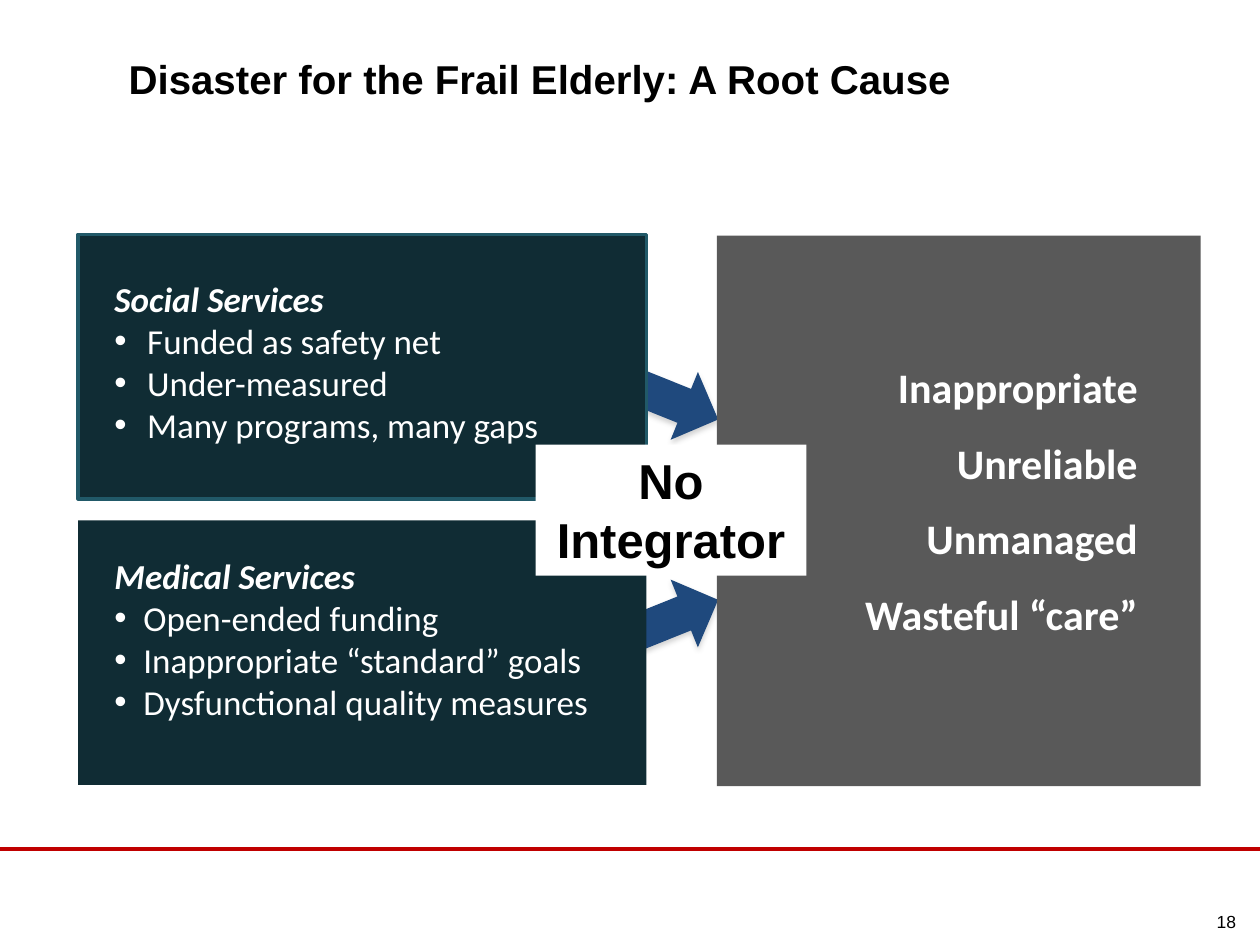
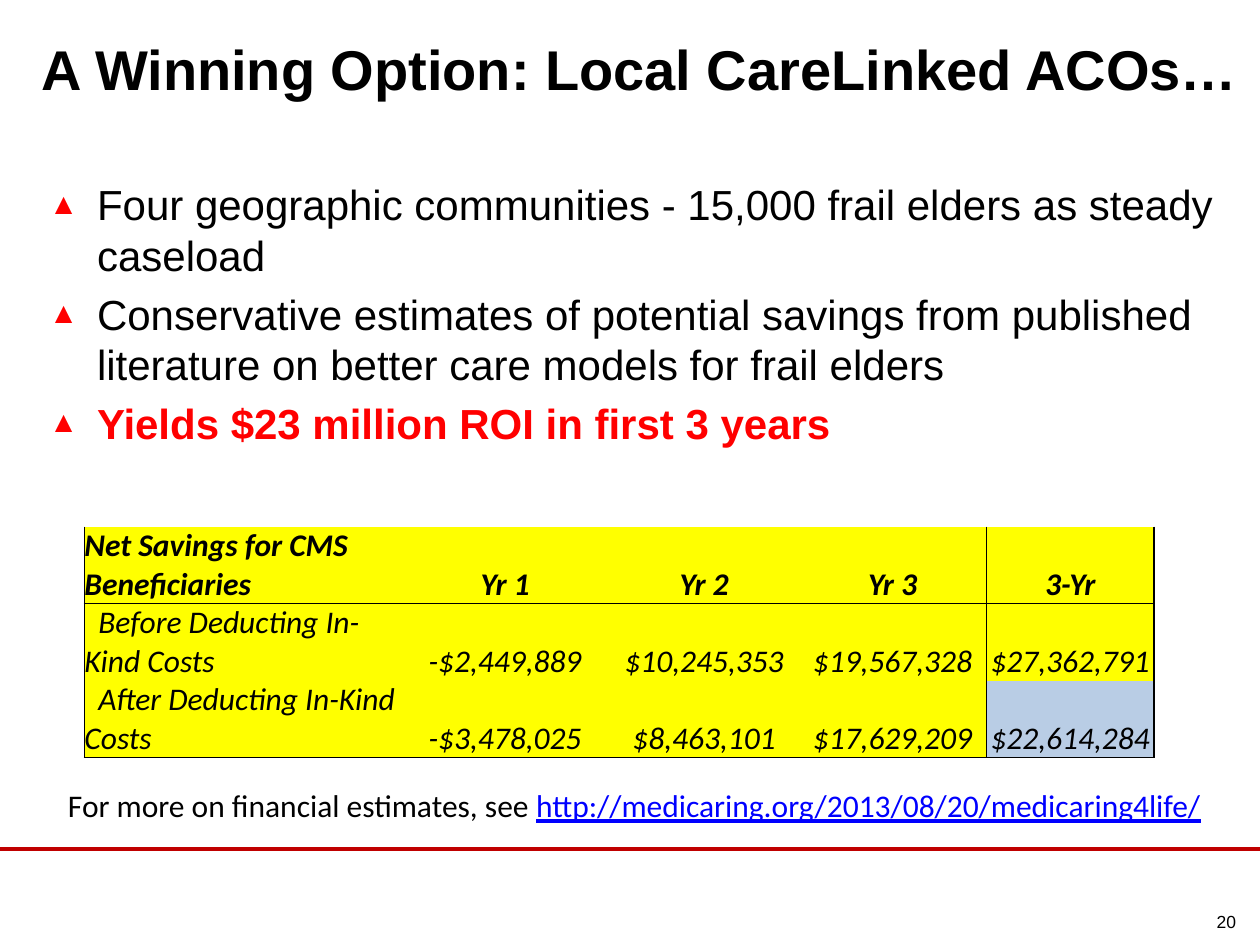
from lxml.etree import SubElement
from pptx import Presentation
from pptx.dml.color import RGBColor
from pptx.enum.shapes import MSO_CONNECTOR, MSO_SHAPE as SHAPE
from pptx.enum.text import MSO_ANCHOR as ANCHOR, MSO_AUTO_SIZE as FIT, PP_ALIGN as ALIGN
from pptx.oxml import parse_xml
from pptx.oxml.ns import nsdecls, qn
from pptx.util import Inches, Pt

rgb = RGBColor.from_string
BLACK, WHITE, RED, RULE = "000000", "FFFFFF", "FF0000", "C00000"
TEAL, TEAL_EDGE, GRAY, NAVY = "102C34", "215968", "595959", "1F497D"
YELLOW, PALE_BLUE, LINK = "FFFF00", "B9CDE5", "0000FF"

prs = Presentation()
prs.slide_width, prs.slide_height = Inches(10), Inches(7.5)
COLS, ROWS = 100, 75
COL, ROW = prs.slide_width / COLS, prs.slide_height / ROWS


def at(x, y, w, h):
    """Turn grid columns and rows into slide lengths."""
    return int(x * COL), int(y * ROW), int(w * COL), int(h * ROW)


def write(tf, lines, font="Calibri", size=18, color=BLACK, bold=False, italic=False,
          underline=False, align=ALIGN.LEFT, anchor=ANCHOR.TOP, margins=(0.1, 0.05, 0.1, 0.05),
          spacing=None, before=0, bullet=None, bullet_color=None, bullet_size=100,
          left=0, first=0):
    """Write lines; a line is a text or a list of (text, colour, underline) runs."""
    tf.word_wrap, tf.auto_size, tf.vertical_anchor = True, FIT.NONE, anchor
    tf.margin_left, tf.margin_top, tf.margin_right, tf.margin_bottom = map(Inches, margins)
    start = len(tf.paragraphs) if tf.text else 0
    for i, line in enumerate(lines, start):
        p = tf.add_paragraph() if i else tf.paragraphs[0]
        pPr = p._p.get_or_add_pPr()
        pPr.set("marL", str(Inches(left)))
        pPr.set("indent", str(Inches(first)))
        if bullet:
            if bullet_color:
                SubElement(SubElement(pPr, qn("a:buClr")), qn("a:srgbClr"), val=bullet_color)
            SubElement(pPr, qn("a:buSzPct"), val=str(bullet_size * 1000))
            SubElement(pPr, qn("a:buFont"), typeface="Arial")
            SubElement(pPr, qn("a:buChar"), char=bullet)
        p.alignment = align
        if spacing:
            p.line_spacing = spacing
        if before and i:
            p.space_before = Pt(before)
        for text, run_color, lined in [(line, color, underline)] if isinstance(line, str) else line:
            r = p.add_run()
            r.text = text
            r.font.name, r.font.size = font, Pt(size)
            r.font.bold, r.font.italic, r.font.underline = bold, italic, lined
            r.font.color.rgb = rgb(run_color)


# Shared title, rule and page number
slides = []
for page, title, size, align, x, w in [
        ("18", "Disaster for the Frail Elderly: A Root Cause", 23, ALIGN.LEFT, 10.2, 79.8),
        ("20", "A Winning Option: Local CareLinked ACOs…", 32, ALIGN.CENTER, 2.8, 96)]:
    s = prs.slides.add_slide(prs.slide_layouts[5])
    slides.append(s)
    sp = s.shapes.title
    sp.left, sp.top, sp.width, sp.height = at(x, 0.9, w, 7.2)
    write(sp.text_frame, [title], font="Arial", size=size, bold=True, align=align,
          anchor=ANCHOR.BOTTOM, margins=(0, 0, 0, 0))
    x1, y, x2, _ = at(0, 67.4, COLS, 0)
    rule = s.shapes.add_connector(MSO_CONNECTOR.STRAIGHT, x1, y, x2, y)
    rule.line.color.rgb, rule.line.width = rgb(RULE), Pt(2)
    SubElement(rule._element.spPr, qn("a:effectLst"))
    number = s.shapes.add_textbox(*at(90.8, 71.8, 7.3, 2.7))
    write(number.text_frame, [page], font="Arial", size=10, align=ALIGN.RIGHT,
          margins=(0, 0.05, 0, 0.05))
cause, option = slides

# Arrows from the services to the outcome
for y, angle in [(27.3, 21.9), (47.8, -21.9)]:
    arrow = cause.shapes.add_shape(SHAPE.RIGHT_ARROW, *at(41, y, 16.6, 5.8))
    arrow.rotation = angle
    arrow.fill.solid()
    arrow.fill.fore_color.rgb = rgb(NAVY)
    arrow.line.fill.background()
    arrow._element.spPr.append(parse_xml(
        f'<a:effectLst {nsdecls("a")}><a:outerShdw blurRad="{Pt(3.1)}" dist="{Pt(1.8)}" '
        'dir="5400000" rotWithShape="0"><a:srgbClr val="808080"><a:alpha val="35000"/>'
        '</a:srgbClr></a:outerShdw></a:effectLst>'))

# Panels, back to front
panels = []
for x, y, w, h, fill, edge in [
        (6.2, 41.3, 45.1, 21, TEAL, None),
        (6.2, 18.6, 45.1, 21, TEAL, TEAL_EDGE),
        (56.9, 18.7, 38.4, 43.7, GRAY, None)]:
    sp = cause.shapes.add_shape(SHAPE.RECTANGLE, *at(x, y, w, h))
    sp.shadow.inherit = False
    sp.fill.solid()
    sp.fill.fore_color.rgb = rgb(fill)
    if edge:
        sp.line.color.rgb, sp.line.width = rgb(edge), Pt(2)
    else:
        sp.line.fill.background()
    panels.append(sp)
write(panels[-1].text_frame, ["Inappropriate", "Unreliable", "Unmanaged", "Wasteful “care”"],
      size=24, color=WHITE, bold=True, align=ALIGN.RIGHT, spacing=1.5,
      margins=(1, 0.8, 0.5, 0.05))

# Service lists
for y, heading, points, indent in [
        (21.5, "Social Services",
         ["Funded as safety net", "Under-measured", "Many programs, many gaps"], 0.26),
        (43.5, "Medical Services",
         ["Open-ended funding", "Inappropriate “standard” goals",
          "Dysfunctional quality measures"], 0.23)]:
    tf = cause.shapes.add_textbox(*at(8.1, y, 43.1, 14.5)).text_frame
    write(tf, [heading], size=20, color=WHITE, bold=True, italic=True)
    write(tf, points, size=20, color=WHITE, bullet="•", left=indent, first=-indent)

# Missing link between the panels
gap = cause.shapes.add_textbox(*at(42.5, 35.3, 21.5, 10.4))
gap.fill.solid()
gap.fill.fore_color.rgb = rgb(WHITE)
write(gap.text_frame, ["No Integrator"], font="Arial", size=28, bold=True, align=ALIGN.CENTER)

# Key points
tf = option.shapes.add_textbox(*at(3.9, 14.2, 93.1, 24)).text_frame
point = dict(font="Arial", size=24, margins=(0, 0, 0, 0), before=4.8, bullet="▲",
             bullet_color=RED, bullet_size=70, left=0.38, first=-0.38)
write(tf, ["Four geographic communities - 15,000 frail elders as steady caseload",
           "Conservative estimates of potential savings from published literature "
           "on better care models for frail elders"], **point)
write(tf, ["Yields $23 million ROI in first 3 years"], color=RED, bold=True, **point)

# Savings table, with a narrow spacer column after the labels
savings = [
    ["Net Savings for CMS Beneficiaries", "", "Yr 1", "Yr 2", "Yr 3", "3-Yr"],
    ["Before Deducting In-Kind Costs", "", "-$2,449,889", "$10,245,353", "$19,567,328",
     "$27,362,791"],
    ["After Deducting In-Kind Costs", "", "-$3,478,025", "$8,463,101", "$17,629,209",
     "$22,614,284"]]
widths = [24.7, 0.3, 16.6, 15, 14.9, 13.3]
across, down = [0, 0.5, 0, 1], [1, 0, 0, 0, 0, 0.5, 1]  # rule widths in points
table = option.shapes.add_table(len(savings), len(widths), *at(6.7, 41.8, sum(widths), 18)).table
for column, w in zip(table.columns, widths):
    column.width = int(w * COL)
for i, row in enumerate(savings):
    for j, text in enumerate(row):
        cell = table.cell(i, j)
        write(cell.text_frame, [text], bold=i == 0, italic=True,
              align=ALIGN.CENTER if j else ALIGN.LEFT, first=0.11 if i and not j else 0)
        cell.vertical_anchor = ANCHOR.BOTTOM
        cell.margin_left = cell.margin_right = cell.margin_top = cell.margin_bottom = 0
        tcPr = cell._tc.get_or_add_tcPr()
        for side, width in zip("LRTB", (down[j], down[j + 1], across[i], across[i + 1])):
            ln = SubElement(tcPr, qn(f"a:ln{side}"), w=str(Pt(width)))
            if width:
                SubElement(SubElement(ln, qn("a:solidFill")), qn("a:srgbClr"), val=BLACK)
            else:
                SubElement(ln, qn("a:noFill"))
        cell.fill.solid()
        is_result = (i, j) == (len(savings) - 1, len(widths) - 1)
        cell.fill.fore_color.rgb = rgb(PALE_BLUE if is_result else YELLOW)

# Reference under the table
tf = option.shapes.add_textbox(*at(4.1, 61.9, 92.5, 4)).text_frame
write(tf, [[("For more on financial estimates, see ", BLACK, False),
            ("http://medicaring.org/2013/08/20/medicaring4life/", LINK, True)]],
      align=ALIGN.CENTER)

prs.save("out.pptx")
